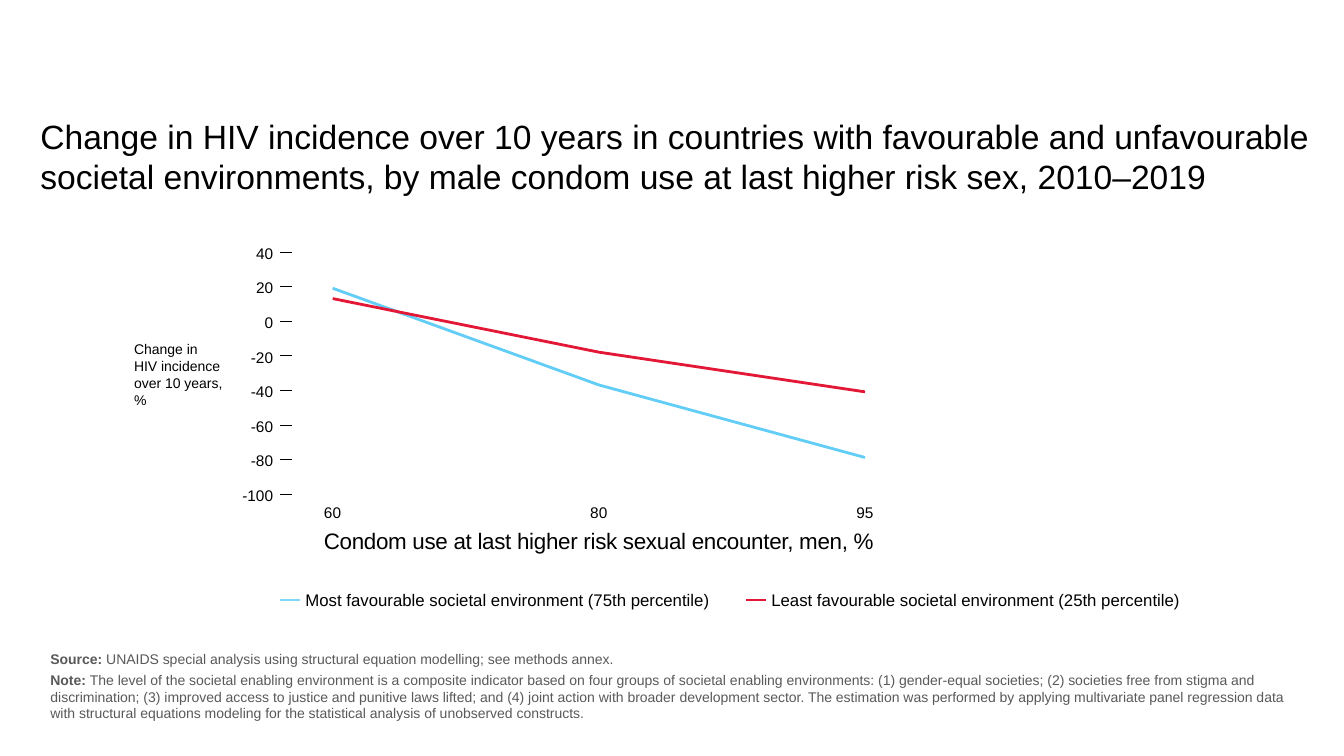
from dataclasses import dataclass

from lxml import etree
from pptx import Presentation
from pptx.chart.data import CategoryChartData
from pptx.dml.color import RGBColor
from pptx.enum.chart import XL_CHART_TYPE, XL_MARKER_STYLE, XL_TICK_LABEL_POSITION, XL_TICK_MARK
from pptx.enum.shapes import MSO_CONNECTOR
from pptx.enum.text import MSO_ANCHOR, MSO_AUTO_SIZE, PP_ALIGN
from pptx.oxml.ns import qn
from pptx.util import Inches, Pt

LEFT, CENTER, RIGHT = PP_ALIGN.LEFT, PP_ALIGN.CENTER, PP_ALIGN.RIGHT
TOP, MIDDLE = MSO_ANCHOR.TOP, MSO_ANCHOR.MIDDLE
LINE_CHART, STRAIGHT = XL_CHART_TYPE.LINE, MSO_CONNECTOR.STRAIGHT
NO_MARKER, NO_TICK = XL_MARKER_STYLE.NONE, XL_TICK_MARK.NONE
LABELS_LOW = XL_TICK_LABEL_POSITION.LOW
NO_FIT = MSO_AUTO_SIZE.NONE


@dataclass(frozen=True)
class Theme:
    font: str = "Arial"
    black: str = "000000"
    grey: str = "595959"
    blue: str = "62CDF6"
    light_blue: str = "80D7F8"
    red: str = "E31836"
    title: int = 24
    axis_title: int = 16
    legend: int = 12
    label: int = 11
    small: int = 10


THEME = Theme()

TITLE = ("Change in HIV incidence over 10 years in countries with favourable and unfavourable "
         "societal environments, by male condom use at last higher risk sex, 2010–2019")
CONDOM_USE = ["60", "80", "95"]
SERIES = [
    ("Most favourable societal environment (75th percentile)", (19, -37, -79),
     THEME.blue, THEME.light_blue, 2.78),
    ("Least favourable societal environment (25th percentile)", (13, -18, -41),
     THEME.red, THEME.red, 7.4),
]
CONDOM_USE_TITLE = "Condom use at last higher risk sexual encounter, men, %"
INCIDENCE_TITLE = ["Change in", "HIV incidence", "over 10 years,", "%"]
SOURCE = [("Source: ", True),
          ("UNAIDS special analysis using structural equation modelling; see methods annex.", False)]
NOTE = [("Note: ", True),
        ("The level of the societal enabling environment is a composite indicator based on four groups "
         "of societal enabling environments: (1) gender-equal societies; (2) societies free from stigma "
         "and discrimination; (3) improved access to justice and punitive laws lifted; and (4) joint "
         "action with broader development sector. The estimation was performed by applying multivariate "
         "panel regression data", False)]
NOTE_END = "with structural equations modeling for the statistical analysis of unobserved constructs."

AXIS_MAX, AXIS_MIN, AXIS_STEP = 40, -100, 20
PLOT = (1.98, 2.5, 7.92, 2.4)
CHART = (1.9, 2.3, 8.1, 3.0)
TICK_LEFT, TICK_WIDTH = 2.78, 0.12
LEGEND_Y, LEGEND_KEY = 5.95, 0.2


def write_text(shape, paragraphs, *, size, color=THEME.black, align=LEFT, anchor=TOP,
               wrap=True, line_spacing=None, space_before=(), tracking=None):
    frame = shape.text_frame
    frame.word_wrap = wrap
    frame.auto_size = NO_FIT
    frame.vertical_anchor = anchor
    frame.margin_left = frame.margin_right = frame.margin_top = frame.margin_bottom = 0
    for index, content in enumerate(paragraphs):
        paragraph = frame.paragraphs[0] if index == 0 else frame.add_paragraph()
        paragraph.alignment = align
        paragraph.space_before = Pt(space_before[index] if space_before else 0)
        if line_spacing:
            paragraph.line_spacing = Pt(line_spacing)
        for text, bold in [(content, False)] if isinstance(content, str) else content:
            run = paragraph.add_run()
            run.text = text
            run.font.name = THEME.font
            run.font.size = Pt(size)
            run.font.bold = bold
            run.font.color.rgb = RGBColor.from_string(color)
            if tracking:
                run.font._element.set("spc", str(int(tracking * 100)))


def add_text(slide, box, paragraphs, **text_format):
    shape = slide.shapes.add_textbox(*map(Inches, box))
    write_text(shape, paragraphs, **text_format)


def add_rule(slide, left, y, width, color, weight):
    rule = slide.shapes.add_connector(STRAIGHT, Inches(left), Inches(y), Inches(left + width), Inches(y))
    rule.line.color.rgb = RGBColor.from_string(color)
    rule.line.width = Pt(weight)
    etree.SubElement(rule._element.spPr, qn("a:effectLst"))


def place_plot_area(chart):
    plot_area = chart._chartSpace.chart.plotArea
    for layout in plot_area.findall(qn("c:layout")):
        plot_area.remove(layout)
    layout = etree.Element(qn("c:layout"))
    manual = etree.SubElement(layout, qn("c:manualLayout"))
    settings = [
        ("layoutTarget", "inner"), ("xMode", "edge"), ("yMode", "edge"),
        ("x", (PLOT[0] - CHART[0]) / CHART[2]), ("y", (PLOT[1] - CHART[1]) / CHART[3]),
        ("w", PLOT[2] / CHART[2]), ("h", PLOT[3] / CHART[3]),
    ]
    for name, value in settings:
        etree.SubElement(manual, qn(f"c:{name}")).set("val", str(value))
    plot_area.insert(0, layout)


def add_incidence_chart(slide):
    data = CategoryChartData()
    data.categories = CONDOM_USE
    for name, values, *_ in SERIES:
        data.add_series(name, values)
    chart = slide.shapes.add_chart(LINE_CHART, *map(Inches, CHART), data).chart
    chart.has_legend = chart.has_title = False
    chart.font.name = THEME.font
    chart.font.size = Pt(THEME.label)
    chart.font.color.rgb = RGBColor.from_string(THEME.black)
    value_axis, category_axis = chart.value_axis, chart.category_axis
    value_axis.minimum_scale, value_axis.maximum_scale = AXIS_MIN, AXIS_MAX
    value_axis.major_unit = AXIS_STEP
    value_axis.has_major_gridlines = False
    value_axis.visible = False
    category_axis.tick_label_position = LABELS_LOW
    category_axis.major_tick_mark = NO_TICK
    category_axis.format.line.fill.background()
    chart.plots[0].vary_by_categories = False
    for series, (_, _, color, *_) in zip(chart.plots[0].series, SERIES):
        series.smooth = False
        series.marker.style = NO_MARKER
        series.format.line.color.rgb = RGBColor.from_string(color)
        series.format.line.width = Pt(2)
    place_plot_area(chart)


def add_value_scale(slide):
    for value in range(AXIS_MAX, AXIS_MIN - 1, -AXIS_STEP):
        y = PLOT[1] + PLOT[3] * (AXIS_MAX - value) / (AXIS_MAX - AXIS_MIN)
        add_rule(slide, TICK_LEFT, y, TICK_WIDTH, THEME.black, 0.25)
        add_text(slide, (2.2, y - 0.09, 0.51, 0.18), [str(value)], size=THEME.label,
                 align=RIGHT, wrap=False, line_spacing=14)


def add_legend(slide):
    for name, _, _, color, left in SERIES:
        add_rule(slide, left, LEGEND_Y, LEGEND_KEY, color, 1.5)
        add_text(slide, (left + 0.25, LEGEND_Y - 0.1, 4.3, 0.2), [name],
                 size=THEME.legend, anchor=MIDDLE, wrap=False)


def main():
    presentation = Presentation()
    presentation.slide_width, presentation.slide_height = Inches(13.33), Inches(7.5)
    slide = presentation.slides.add_slide(presentation.slide_layouts[5])
    title = slide.shapes.title
    title.left, title.top, title.width, title.height = map(Inches, (0.4, 1.15, 12.68, 0.9))
    write_text(title, [TITLE], size=THEME.title)
    add_incidence_chart(slide)
    add_value_scale(slide)
    add_text(slide, (3.18, 5.23, 5.52, 0.27), [CONDOM_USE_TITLE], size=THEME.axis_title,
             align=CENTER, anchor=MIDDLE, wrap=False, tracking=-0.2)
    add_text(slide, (1.33, 3.38, 0.93, 0.69), INCIDENCE_TITLE, size=THEME.small, wrap=False)
    add_legend(slide)
    add_text(slide, (0.5, 6.45, 12.58, 0.72), [SOURCE, NOTE, NOTE_END], size=THEME.small,
             color=THEME.grey, space_before=(0, 3, 0))
    presentation.save("out.pptx")


if __name__ == "__main__":
    main()
